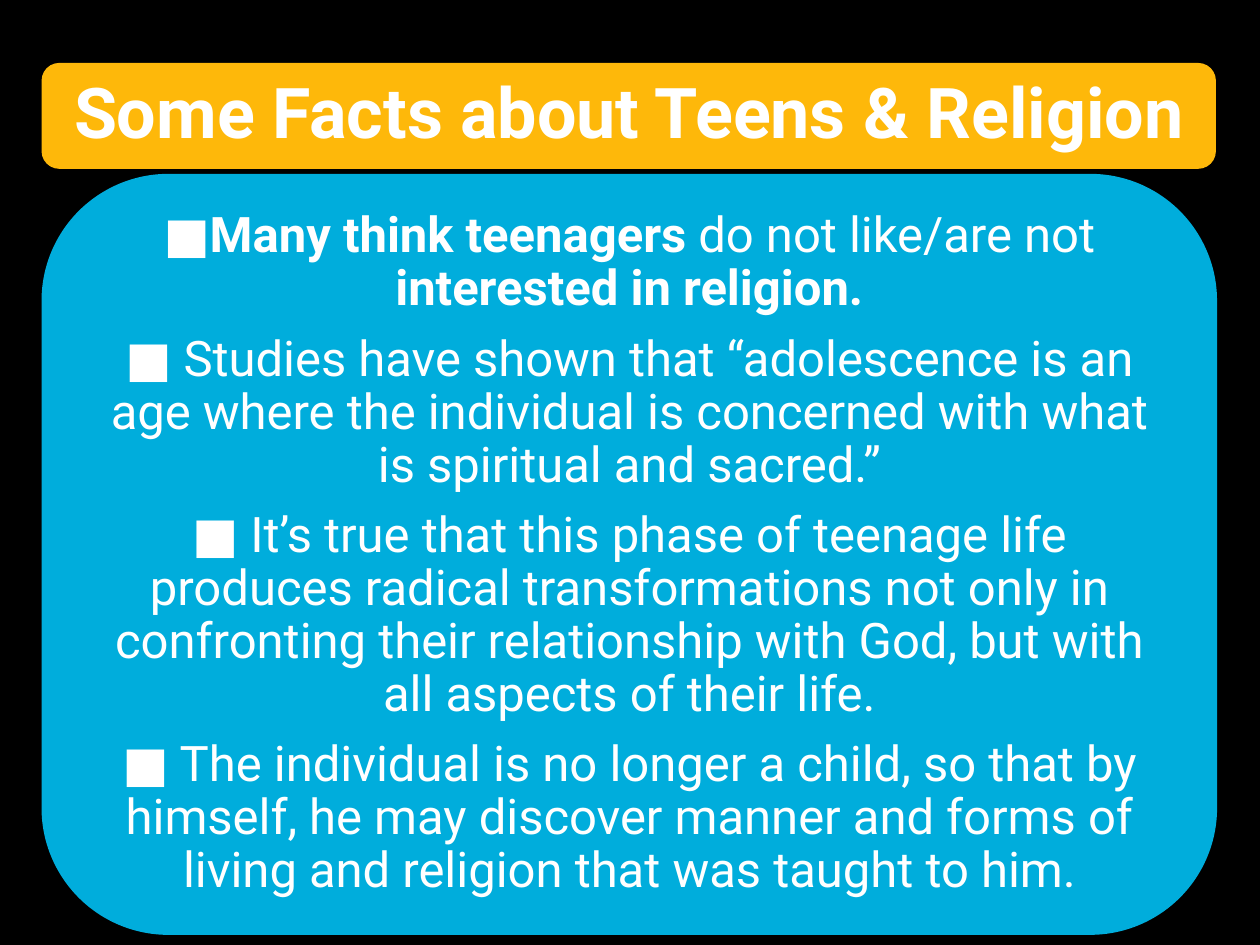
from pptx import Presentation
from pptx.dml.color import RGBColor
from pptx.enum.shapes import MSO_SHAPE
from pptx.enum.text import MSO_ANCHOR, PP_ALIGN
from pptx.util import Inches, Pt

ROUNDED = MSO_SHAPE.ROUNDED_RECTANGLE
MIDDLE = MSO_ANCHOR.MIDDLE
CENTER = PP_ALIGN.CENTER

BLACK = RGBColor(0x00, 0x00, 0x00)
WHITE = RGBColor(0xFF, 0xFF, 0xFF)
AMBER = RGBColor(0xFE, 0xB8, 0x0A)
BLUE = RGBColor(0x00, 0xAD, 0xDC)

FONT = "Roboto"
BULLET_FONT = "Calibri"
SPACE_SHARE = 0.35  # space after a paragraph, as a share of its text size

TITLE = "Some Facts about Teens & Religion"
LEAD_FACT = [  # text, font, bold
    ("■", BULLET_FONT, True),
    ("Many think teenagers ", FONT, True),
    ("do not like/are not ", FONT, False),
    ("interested in religion.", FONT, True),
]
FACTS = [
    "■ Studies have shown that “adolescence is an age where the individual "
    "is concerned with what is spiritual and sacred.”",
    "■ It’s true that this phase of teenage life produces radical "
    "transformations not only in confronting their relationship with God, "
    "but with all aspects of their life.",
    "■ The individual is no longer a child, so that by himself, he may "
    "discover manner and forms of living and religion that was taught to him.",
]


def add_panel(slide, box, color, inset, margins):
    """Draw a rounded panel and return the frame of the text box inset in it."""
    left, top, width, height = box
    panel = slide.shapes.add_shape(ROUNDED, *(Inches(v) for v in box))
    panel.shadow.inherit = False
    panel.fill.solid()
    panel.fill.fore_color.rgb = color
    panel.line.fill.background()

    inner = (left + inset, top + inset, width - 2 * inset, height - 2 * inset)
    frame = slide.shapes.add_textbox(*(Inches(v) for v in inner)).text_frame
    frame.word_wrap = True
    frame.vertical_anchor = MIDDLE
    side, edge = margins
    frame.margin_left = frame.margin_right = Inches(side)
    frame.margin_top = frame.margin_bottom = Inches(edge)
    return frame


def style_paragraph(paragraph, size):
    paragraph.alignment = CENTER
    paragraph.line_spacing = 0.9
    paragraph.space_after = Pt(round(size * SPACE_SHARE))
    paragraph.font.size = Pt(size)
    paragraph.font.color.rgb = WHITE
    paragraph.font.name = FONT


def add_title(slide, box):
    frame = add_panel(slide, box, AMBER, 0.04, (0.17, 0.08))
    heading = frame.paragraphs[0]
    heading.text = TITLE
    style_paragraph(heading, 40)
    heading.font.bold = True


def add_facts(slide, box):
    frame = add_panel(slide, box, BLUE, 0.3, (0.12, 0.06))
    lead = frame.paragraphs[0]
    style_paragraph(lead, 28)
    for text, font, bold in LEAD_FACT:
        run = lead.add_run()
        run.text = text
        run.font.name = font
        run.font.bold = bold
    for text in FACTS:
        fact = frame.add_paragraph()
        fact.text = text
        style_paragraph(fact, 28)


def main():
    prs = Presentation()
    prs.slide_width, prs.slide_height = Inches(10), Inches(7.5)
    slide = prs.slides.add_slide(prs.slide_layouts[6])
    slide.background.fill.solid()
    slide.background.fill.fore_color.rgb = BLACK
    add_title(slide, (0.33, 0.5, 9.32, 0.84))
    add_facts(slide, (0.33, 1.38, 9.33, 6.04))
    prs.save("out.pptx")


if __name__ == "__main__":
    main()
